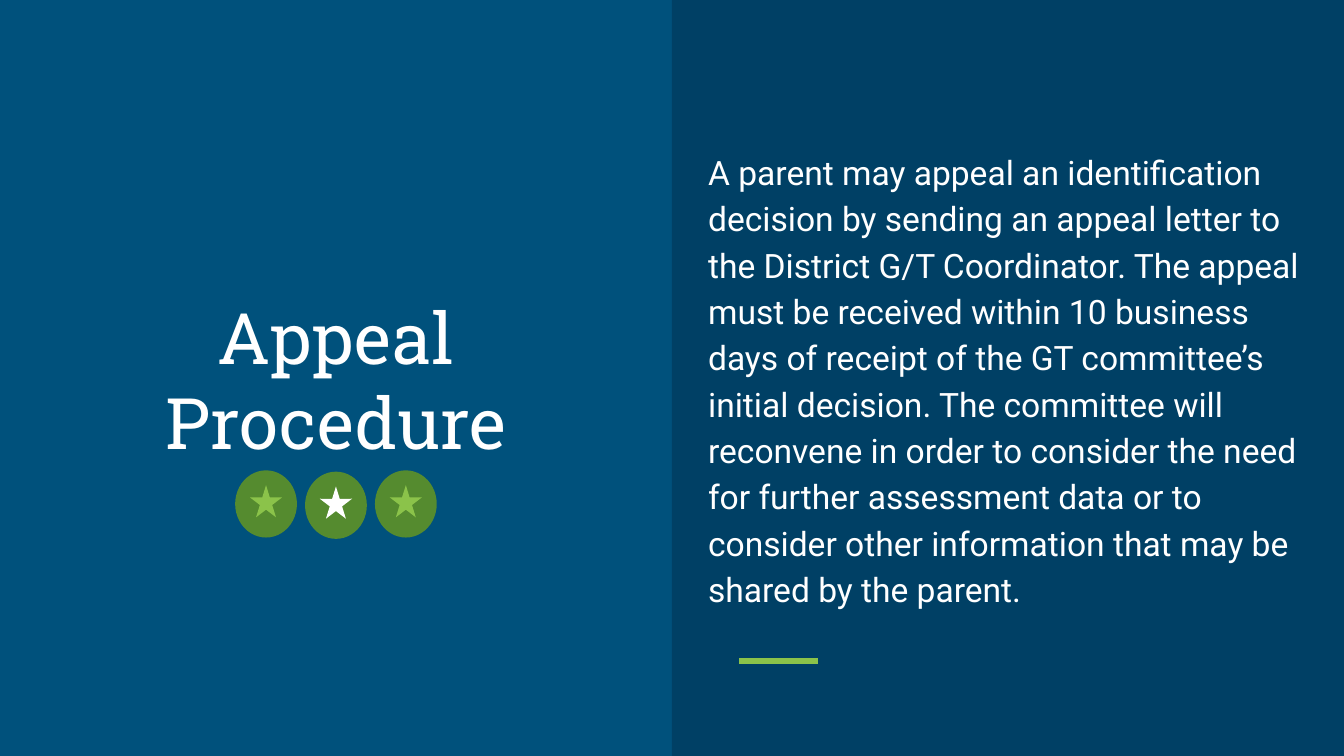
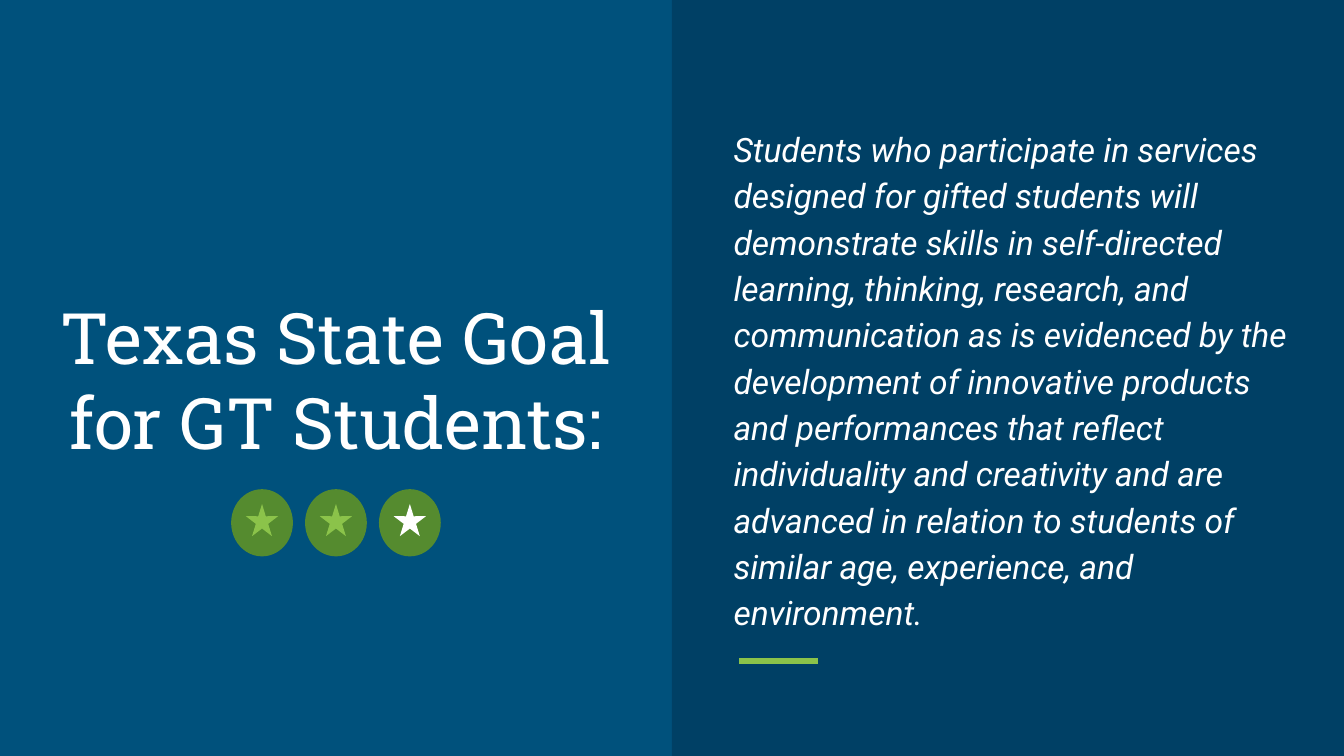
from dataclasses import dataclass

from lxml.etree import SubElement
from pptx import Presentation
from pptx.dml.color import RGBColor
from pptx.enum.shapes import MSO_CONNECTOR, MSO_SHAPE
from pptx.enum.text import MSO_ANCHOR, PP_ALIGN
from pptx.oxml.ns import qn
from pptx.util import Inches, Pt


@dataclass(frozen=True)
class Theme:
    background: str = "00517C"
    panel: str = "004065"
    accent: str = "8BC34A"
    badge: str = "558B2F"
    white: str = "FFFFFF"
    title_font: str = "Roboto Slab"
    body_font: str = "Roboto"
    title_size: int = 38
    body_size: int = 18
    rule_width: int = 3


THEME = Theme()
WIDTH = 10
HEIGHT = WIDTH * 9 / 16
TITLE_BOX = (0.29, 1.99, 4.42, 1.65)
BADGE_W, BADGE_H, STAR = 0.46, 0.5, 0.24

APPEAL = (
    "A parent may appeal an identification decision by sending an appeal letter "
    "to the District G/T Coordinator. The appeal must be received within 10 "
    "business days of receipt of the GT committee’s initial decision. The "
    "committee will reconvene in order to consider the need for further "
    "assessment data or to consider other information that may be shared by "
    "the parent."
)
STATE_GOAL = (
    "Students who participate in services designed for gifted students will "
    "demonstrate skills in self-directed learning, thinking, research, and "
    "communication as is evidenced by the development of innovative products "
    "and performances that reflect individuality and creativity and are "
    "advanced in relation to students of similar age, experience, and "
    "environment."
)


def rgb(color):
    return RGBColor.from_string(color)


def add_filled(shapes, kind, box, color):
    sp = shapes.add_shape(kind, *map(Inches, box))
    sp.shadow.inherit = False
    sp.fill.solid()
    sp.fill.fore_color.rgb = rgb(color)
    sp.line.fill.background()
    return sp


def add_split_slide(prs):
    """Slide with a dark right half and a short accent rule."""
    s = prs.slides.add_slide(prs.slide_layouts[6])
    s.background.fill.solid()
    s.background.fill.fore_color.rgb = rgb(THEME.background)
    add_filled(s.shapes, MSO_SHAPE.RECTANGLE,
               (WIDTH / 2, 0, WIDTH / 2, HEIGHT), THEME.panel)
    rule = s.shapes.add_connector(
        MSO_CONNECTOR.STRAIGHT, *map(Inches, (5.5, 4.92, 6.09, 4.92)))
    rule.line.color.rgb = rgb(THEME.accent)
    rule.line.width = Pt(THEME.rule_width)
    SubElement(rule._element.spPr, qn("a:effectLst"))
    return s


def add_text(s, box, text, font, size):
    tf = s.shapes.add_textbox(*map(Inches, box)).text_frame
    tf.word_wrap = True
    tf.vertical_anchor = MSO_ANCHOR.MIDDLE
    tf.margin_left = tf.margin_right = Inches(0.1)
    tf.margin_top = tf.margin_bottom = Inches(0.1)
    p = tf.paragraphs[0]
    p.text = text
    p.font.name = font
    p.font.size = Pt(size)
    p.font.color.rgb = rgb(THEME.white)
    return p


def add_title(s, text):
    p = add_text(s, TITLE_BOX, text, THEME.title_font, THEME.title_size)
    p.alignment = PP_ALIGN.CENTER


def add_body(s, box, text, italic=False):
    p = add_text(s, box, text, THEME.body_font, THEME.body_size)
    p.line_spacing = 1.15
    p.space_after = Pt(16)
    p.font.italic = italic


def add_badge(s, left, top, star_color):
    """Star centred across a round badge, grouped."""
    shapes = s.shapes.add_group_shape().shapes
    add_filled(shapes, MSO_SHAPE.OVAL, (left, top, BADGE_W, BADGE_H), THEME.badge)
    inset = (BADGE_W - STAR) / 2
    add_filled(shapes, MSO_SHAPE.STAR_5_POINT,
               (left + inset, top + inset, STAR, STAR), star_color)


def add_badges(s, tops, pitch, current):
    """Row of badges centred on the left half, the current one in white."""
    middle = (WIDTH / 2 - BADGE_W) / 2
    for i, top in enumerate(tops):
        color = THEME.white if i == current else THEME.accent
        add_badge(s, middle + (i - 1) * pitch, top, color)


def main():
    prs = Presentation()
    prs.slide_width, prs.slide_height = Inches(WIDTH), Inches(HEIGHT)

    # Appeal procedure
    s = add_split_slide(prs)
    add_body(s, (5.17, 0.79, 4.68, 4.04), APPEAL)
    add_title(s, "Appeal Procedure")
    add_badges(s, tops=(3.5, 3.51, 3.5), pitch=0.52, current=1)

    # State goal
    s = add_split_slide(prs)
    add_title(s, "Texas State Goal for GT Students:")
    add_body(s, (5.36, 0.04, 4.34, 5.54), STATE_GOAL, italic=True)
    add_badges(s, tops=(3.64,) * 3, pitch=0.55, current=2)

    prs.save("out.pptx")


if __name__ == "__main__":
    main()
